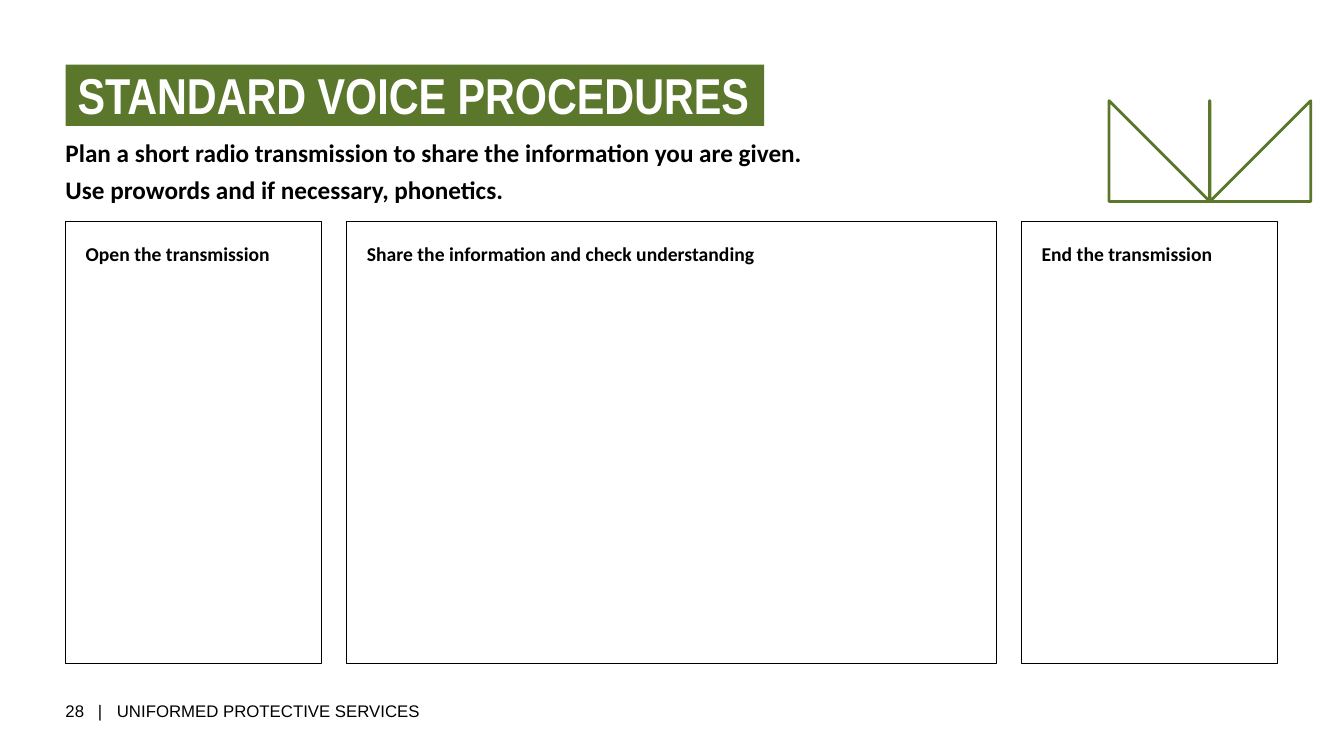
from dataclasses import dataclass

from lxml.etree import SubElement as Sub
from pptx import Presentation
from pptx.dml.color import RGBColor as Rgb
from pptx.enum.shapes import MSO_SHAPE as Shape
from pptx.enum.text import MSO_ANCHOR as Anchor, PP_ALIGN as Align
from pptx.oxml.ns import qn
from pptx.util import Inches, Pt


@dataclass(frozen=True)
class Theme:
    green: Rgb = Rgb(0x5B, 0x77, 0x2B)
    black: Rgb = Rgb(0, 0, 0)
    white: Rgb = Rgb(255, 255, 255)
    title: tuple = ("Arial Narrow", 36, True)
    body: tuple = ("Calibri", 18, True)
    label: tuple = ("Calibri", 14, True)
    foot: tuple = ("Arial", 12, False)


class Page:
    """Draws on a grid of 22 columns and 75 rows."""
    left, right, gap, cols = 0.65, 12.67, 0.25, 22
    step = (right - left + gap) / cols
    row = 7.5 / 75

    def __init__(self, slide, theme):
        self.slide, self.theme = slide, theme

    def area(self, col, row, wide, high):
        return (Inches(self.left + col * self.step), Inches(row * self.row),
                Inches(wide * self.step - self.gap), Inches(high * self.row))

    def fill_text(self, shape, lines, font, color, inset=(0, 0, 0, 0),
                  after=0, wrap=True, anchor=Anchor.TOP, tabs=()):
        frame = shape.text_frame
        frame.word_wrap = wrap
        frame.vertical_anchor = anchor
        (frame.margin_left, frame.margin_top,
         frame.margin_right, frame.margin_bottom) = map(Inches, inset)
        for i, line in enumerate(lines):
            para = frame.add_paragraph() if i else frame.paragraphs[0]
            para.alignment = Align.LEFT
            para.space_after = Pt(after)
            if tabs:
                stops = Sub(para._p.get_or_add_pPr(), qn("a:tabLst"))
                for stop in tabs:
                    Sub(stops, qn("a:tab"), pos=str(Inches(stop)), algn="l")
            run = para.add_run()
            run.text = line
            run.font.name, size, run.font.bold = font
            run.font.size = Pt(size)
            run.font.color.rgb = color

    def text(self, area, lines, font, **style):
        box = self.slide.shapes.add_textbox(*self.area(*area))
        self.fill_text(box, lines, font, self.theme.black, **style)

    def banner(self, area, title):
        bar = self.slide.shapes.add_shape(Shape.RECTANGLE, *self.area(*area))
        bar.shadow.inherit = False
        bar.fill.solid()
        bar.fill.fore_color.rgb = self.theme.green
        bar.line.fill.background()
        self.fill_text(bar, [title], self.theme.title, self.theme.white,
                       inset=(0.12, 0, 0.08, 0), wrap=False)

    def outline(self, shape, color, width):
        shape.shadow.inherit = False
        shape.fill.background()
        shape.line.color.rgb = color
        shape.line.width = Pt(width)

    def panel(self, area, label):
        box = self.slide.shapes.add_shape(Shape.RECTANGLE, *self.area(*area))
        self.outline(box, self.theme.black, 1)
        self.fill_text(box, [label], self.theme.label, self.theme.black,
                       inset=(0.2,) * 4, after=5)

    def crosses(self, count, row):
        # One arm of the cross, turned by quarters
        arm = [(0.11, 0.21), (0.21, 0.11), (0.1, 0)]
        ring = []
        for _ in range(4):
            ring += arm
            arm = [(y, -x) for x, y in arm]
        pen = None
        for i in range(count):
            mid_x = self.right - 0.21 - i * self.step
            mid_y = row * self.row
            dots = [(mid_x + x, mid_y + y) for x, y in ring]
            if pen is None:
                pen = self.slide.shapes.build_freeform(
                    *dots[0], scale=Inches(1))
            else:
                pen.move_to(*dots[0])
            pen.add_line_segments(dots[1:], close=True)
        self.outline(pen.convert_to_shape(), self.theme.green, 2)


def main():
    deck = Presentation()
    deck.slide_width, deck.slide_height = Inches(13.33), Inches(7.5)
    theme = Theme()
    page = Page(deck.slides.add_slide(deck.slide_layouts[6]), theme)

    # Footer
    page.text((0, 69.5, 7.3, 2), ["28\t|\tUNIFORMED PROTECTIVE SERVICES"],
              theme.foot, anchor=Anchor.MIDDLE, tabs=(0.32, 0.51))

    # Heading and task
    page.banner((0, 6.4, 12.87, 6.1), "STANDARD VOICE PROCEDURES")
    page.text((0, 13.6, 17.64, 6.8), [
        "Plan a short radio transmission to share the information "
        "you are given.",
        "Use prowords and if necessary, phonetics.",
    ], theme.body, after=5)
    page.crosses(3, 16.6)

    # Writing panels, side by side
    col = 0
    for wide, label in ((5, "Open the transmission"),
                        (12, "Share the information and check understanding"),
                        (5, "End the transmission")):
        page.panel((col, 22, wide, 43.8), label)
        col += wide

    deck.save("out.pptx")


if __name__ == "__main__":
    main()
